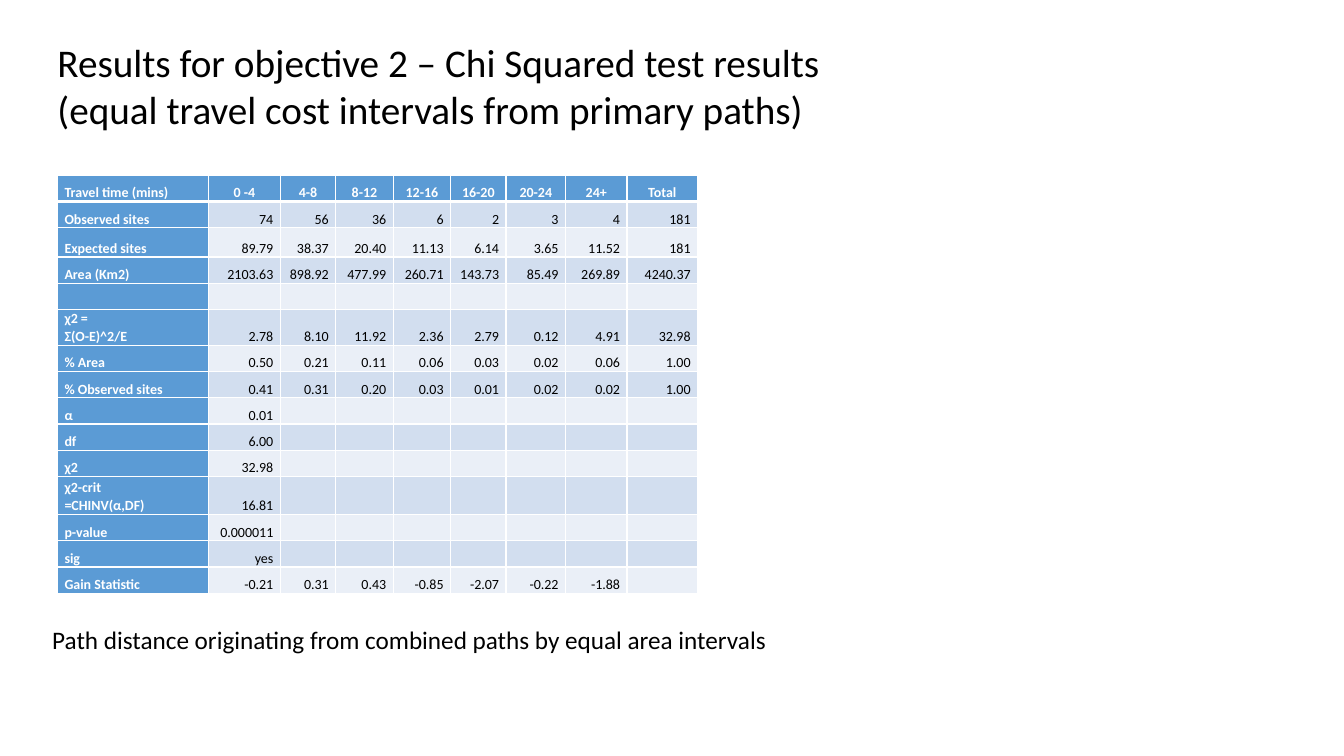
from lxml import etree
from pptx import Presentation
from pptx.dml.color import RGBColor
from pptx.enum.text import MSO_ANCHOR, MSO_AUTO_SIZE, PP_ALIGN
from pptx.oxml.ns import qn
from pptx.util import Pt

PX = 9144  # EMU per px, 100 px to the inch
LEFT, CENTER, RIGHT = PP_ALIGN.LEFT, PP_ALIGN.CENTER, PP_ALIGN.RIGHT
TOP, BOTTOM = MSO_ANCHOR.TOP, MSO_ANCHOR.BOTTOM
GROW = MSO_AUTO_SIZE.SHAPE_TO_FIT_TEXT
FONT = "Calibri"
BLACK, WHITE, BLUE = "000000", "FFFFFF", "5B9BD5"
BANDS = ["D2DEEF", "EAEFF7"]

TITLE = ("Results for objective 2 – Chi Squared test results\n"
         "(equal travel cost intervals from primary paths)")
CAPTION = "Path distance originating from combined paths by equal area intervals"
COLUMN_WIDTHS = [150, 71, 55, 57, 57, 55, 59, 61, 70]
ROW_HEIGHT = 26
TALL_ROWS = {2: 29, 5: 35, 11: 38}
RESULTS = [
    ["Travel time (mins)", "0 -4", "4-8", "8-12", "12-16", "16-20", "20-24", "24+", "Total"],
    ["Observed sites", "74", "56", "36", "6", "2", "3", "4", "181"],
    ["Expected sites", "89.79", "38.37", "20.40", "11.13", "6.14", "3.65", "11.52", "181"],
    ["Area (Km2)", "2103.63", "898.92", "477.99", "260.71", "143.73", "85.49", "269.89", "4240.37"],
    [],
    ["χ2 =\nΣ(O-E)^2/E", "2.78", "8.10", "11.92", "2.36", "2.79", "0.12", "4.91", "32.98"],
    ["% Area", "0.50", "0.21", "0.11", "0.06", "0.03", "0.02", "0.06", "1.00"],
    ["% Observed sites", "0.41", "0.31", "0.20", "0.03", "0.01", "0.02", "0.02", "1.00"],
    ["α", "0.01"],
    ["df", "6.00"],
    ["χ2", "32.98"],
    ["χ2-crit\n=CHINV(α,DF)", "16.81"],
    ["p-value", "0.000011"],
    ["sig", "yes"],
    ["Gain Statistic", "-0.21", "0.31", "0.43", "-0.85", "-2.07", "-0.22", "-1.88"],
]


def color(hex_value):
    return RGBColor.from_string(hex_value)


def write(frame, text, size, ink=BLACK, bold=False, align=LEFT, spacing=1.0):
    """Fill a text frame, one paragraph per line of text."""
    frame.text = text
    for para in frame.paragraphs:
        para.alignment = align
        para.line_spacing = spacing
        para.space_before = Pt(0)
        para.font.name = FONT
        para.font.size = Pt(size)
        para.font.bold = bold
        para.font.color.rgb = color(ink)
        if not text:
            etree.SubElement(para._p, qn("a:endParaRPr"), sz=str(size * 100))


def place(shape, box):
    shape.left, shape.top, shape.width, shape.height = (n * PX for n in box)


def add_title(page, box):
    title = page.shapes.title
    place(title, box)
    frame = title.text_frame
    write(frame, TITLE, 28)
    frame.word_wrap = True
    frame.vertical_anchor = TOP
    frame.auto_size = GROW


def add_caption(page, box):
    caption = page.shapes.add_textbox(*(n * PX for n in box))
    write(caption.text_frame, CAPTION, 18)
    caption.text_frame.word_wrap = True
    caption.text_frame.auto_size = GROW


def add_borders(cell, widths):
    """Draw white borders; widths maps a side (L, R, T, B) to points."""
    properties = cell._tc.get_or_add_tcPr()
    for side, width in widths.items():
        line = etree.SubElement(properties, qn(f"a:ln{side}"), w=str(Pt(width)))
        fill = etree.SubElement(line, qn("a:solidFill"))
        etree.SubElement(fill, qn("a:srgbClr"), val=WHITE)


def format_cell(cell, text, row, column):
    header, label = row == 0, column == 0
    strong = header or label
    align = LEFT if label else CENTER if header else RIGHT
    write(cell.text_frame, text, 10, WHITE if strong else BLACK, strong, align, 1.07)
    cell.vertical_anchor = BOTTOM
    cell.margin_left = cell.margin_right = 7 * PX
    cell.margin_top = cell.margin_bottom = 0
    add_borders(cell, {"L": 1, "R": 1, "T": 3 if row == 1 else 1, "B": 3 if header else 1})
    cell.fill.solid()
    cell.fill.fore_color.rgb = color(BLUE if strong else BANDS[(row - 1) % 2])


def add_results(page, left, top):
    heights = [TALL_ROWS.get(row, ROW_HEIGHT) for row in range(len(RESULTS))]
    box = (left, top, sum(COLUMN_WIDTHS), sum(heights))
    table = page.shapes.add_table(len(heights), len(COLUMN_WIDTHS),
                                  *(n * PX for n in box)).table
    table.first_col = True
    for column, width in zip(table.columns, COLUMN_WIDTHS):
        column.width = width * PX
    for row, values in enumerate(RESULTS):
        table.rows[row].height = heights[row] * PX
        for column in range(len(COLUMN_WIDTHS)):
            text = values[column] if column < len(values) else ""
            format_cell(table.cell(row, column), text, row, column)


def main():
    deck = Presentation()
    deck.slide_width, deck.slide_height = 1333 * PX, 750 * PX
    page = deck.slides.add_slide(deck.slide_layouts[5])
    add_title(page, (47, 33, 1215, 104))
    add_results(page, 57, 174)
    add_caption(page, (42, 614, 1123, 40))
    deck.save("out.pptx")


if __name__ == "__main__":
    main()
